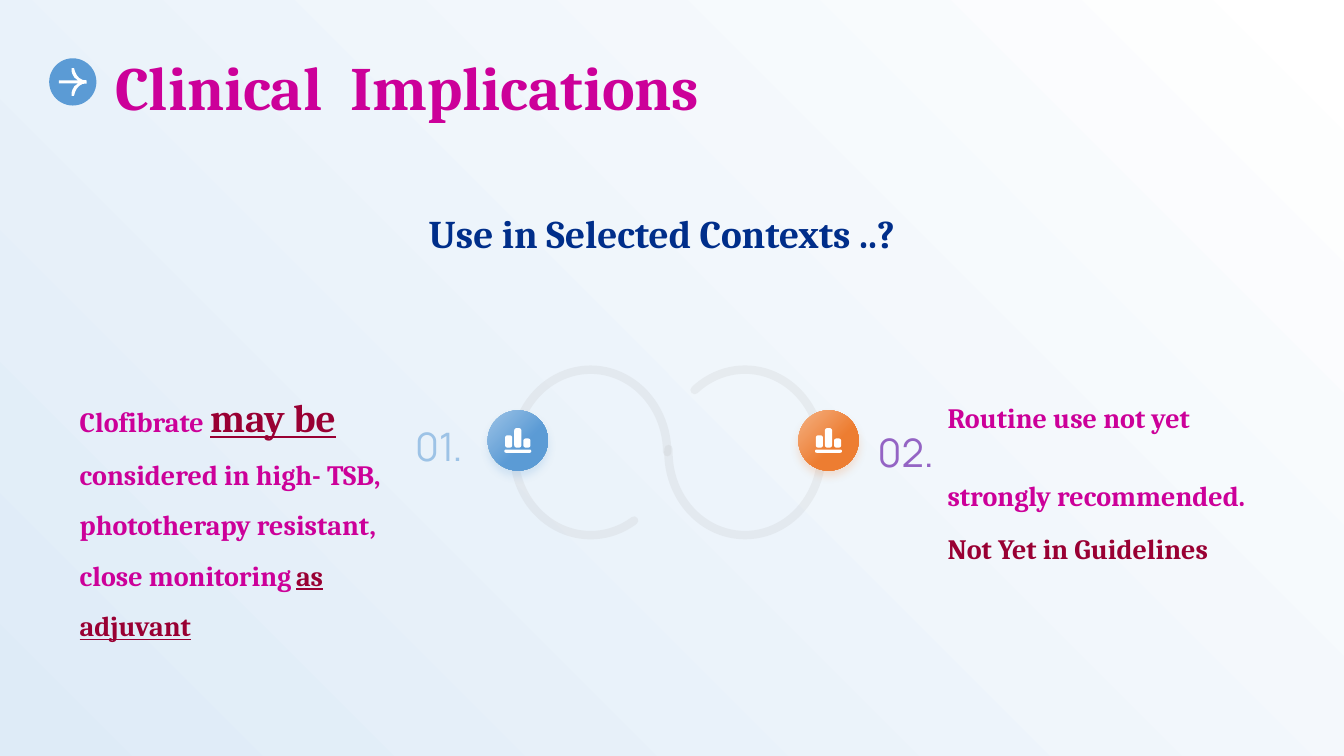
from math import cos, radians, sin

from lxml.etree import SubElement
from pptx import Presentation
from pptx.dml.color import RGBColor
from pptx.enum.shapes import MSO_SHAPE as Shape
from pptx.enum.text import MSO_ANCHOR as Anchor, MSO_AUTO_SIZE as AutoSize, PP_ALIGN as Align
from pptx.oxml.ns import qn
from pptx.util import Cm, Pt

COLORS = {
    "white": "FFFFFF", "mist": "DEEBF7", "grey": "BFBFBF", "ink": "262626",
    "blue": "5B9BD5", "light blue": "9DC3E6", "orange": "ED7D31", "light orange": "F4B183",
    "purple": "9464C4", "navy": "002E8A", "magenta": "CC0099", "crimson": "990033",
}
SLIDE_SIZE = (33.87, 19.05)
BLUE_FADE = ("light blue", "blue")
ORANGE_FADE = ("light orange", "orange")

TITLE = [
    ("Clinical", {"size": 44, "color": "magenta"}),
    (" ", {"size": 44, "color": "magenta", "spacing": 10}),
    ("Implications", {"size": 44, "color": "magenta"}),
]
HEADING = [("Use in Selected Contexts ..?", {"size": 28, "color": "navy"})]
SELECTED_USE = [
    ("Clofibrate ", {"size": 20, "color": "magenta"}),
    ("may be ", {"size": 28, "color": "crimson", "underline": True}),
    ("considered in high- TSB, phototherapy resistant, close monitoring",
     {"size": 20, "color": "magenta"}),
    (" ", {"size": 14, "color": "ink", "bold": False}),
    ("as adjuvant", {"size": 20, "color": "crimson", "underline": True}),
]
ROUTINE_USE = [
    ("Routine use not yet strongly recommended.", {"size": 20, "color": "magenta"}),
    (" ", {"size": 32, "color": "crimson"}),
    ("Not Yet in Guidelines", {"size": 20, "color": "crimson"}),
]
NUMBER_STYLE = {"size": 28, "font": "Manrope", "bold": False}
TEXTS = [
    ((2.9, 1.47, 29.08, 1.19), TITLE, {"spacing": 1.1, "anchor": Anchor.MIDDLE}),
    ((3, 4.06, 27.36, 2.39), HEADING, {"align": Align.CENTER, "anchor": Anchor.BOTTOM}),
    ((2.01, 9.32, 7.75, 3.07), SELECTED_USE, {}),
    ((23.88, 9.68, 7.75, 5.79), ROUTINE_USE, {}),
    ((10.11, 10.39, 1.8, 1.35), [("01.", {**NUMBER_STYLE, "color": BLUE_FADE})],
     {"spacing": 1.1, "align": Align.RIGHT, "label": True}),
    ((21.87, 10.54, 1.96, 1.35), [("02.", {**NUMBER_STYLE, "color": "purple"})],
     {"spacing": 1.1, "label": True}),
]

ARC_TOP, ARC_SIZE = 9.47, (4.17, 3.86)
ARCS = [(12.8, (147.42, 89.81), False), (16.69, (87.51, 38.99), True)]
BADGE_TOP, BADGE_SIZE = 10.34, 1.52
BADGES = [(12.29, BLUE_FADE), (20.12, ORANGE_FADE)]
CHART_BARS = [(-0.34, 0.23, 0.68, 0.08), (-0.32, -0.13, 0.18, 0.31),
              (-0.09, -0.31, 0.18, 0.49), (0.14, -0.05, 0.18, 0.23)]
ARROW_BOX = (1.24, 1.47, 1.19, 1.19)
ARROW_UPPER = [(-0.35, -0.04), (0.13, -0.04), (0.04, -0.11), (-0.01, -0.2), (-0.03, -0.27),
               (-0.03, -0.35), (0.03, -0.35), (0.06, -0.25), (0.1, -0.17), (0.16, -0.1),
               (0.25, -0.05), (0.35, -0.04)]


def rgb(name):
    return RGBColor.from_string(COLORS[name])


def set_fill(fill, color, angle=315, end=0.6):
    if isinstance(color, str):
        fill.solid()
        fill.fore_color.rgb = rgb(color)
        return
    fill.gradient()
    fill.gradient_angle = angle
    for stop, name, position in zip(fill.gradient_stops, color, (0, end)):
        stop.color.rgb = rgb(name)
        stop.position = position


def add_filled(slide, kind, box, color, **gradient):
    shape = slide.shapes.add_shape(kind, *map(Cm, box))
    shape.shadow.inherit = False
    shape.line.fill.background()
    set_fill(shape.fill, color, **gradient)
    return shape


def add_arc(slide, left, angles, flipped):
    arc = slide.shapes.add_shape(Shape.ARC, Cm(left), Cm(ARC_TOP), *map(Cm, ARC_SIZE))
    arc.shadow.inherit = False
    arc.rotation = 270
    for index, angle in enumerate(angles):
        arc.adjustments[index] = angle * 0.6
    if flipped:
        arc._element.spPr.find(qn("a:xfrm")).set("flipV", "1")
    arc.fill.background()
    arc.line.width = Pt(6)
    arc.line.color.rgb = rgb("grey")
    line = arc._element.spPr.find(qn("a:ln"))
    line.set("cap", "rnd")
    SubElement(line.find(".//" + qn("a:srgbClr")), qn("a:alpha"), val="20000")


def add_glow(shape, color):
    effects = shape._element.spPr.find(qn("a:effectLst"))
    shadow = SubElement(effects, qn("a:outerShdw"), blurRad=str(Pt(6)), dist=str(Pt(4)),
                        dir="5400000", algn="t", rotWithShape="0")
    tint = SubElement(shadow, qn("a:srgbClr"), val=COLORS[color])
    SubElement(tint, qn("a:alpha"), val="20000")


def rounded_outline(left, top, width, height):
    radius = min(0.06, height / 2)
    corners = [(left + width - radius, top + height - radius), (left + radius, top + height - radius),
               (left + radius, top + radius), (left + width - radius, top + radius)]
    return [(x + radius * cos(radians(90 * turn + step)), y + radius * sin(radians(90 * turn + step)))
            for turn, (x, y) in enumerate(corners) for step in range(0, 91, 15)]


def add_icon(slide, center, outlines):
    contours = [[(Cm(center[0] + x), Cm(center[1] + y)) for x, y in outline] for outline in outlines]
    builder = slide.shapes.build_freeform(*contours[0][0])
    for index, contour in enumerate(contours):
        if index:
            builder.move_to(*contour[0])
        builder.add_line_segments(contour[1:], close=True)
    icon = builder.convert_to_shape()
    icon.shadow.inherit = False
    icon.line.fill.background()
    set_fill(icon.fill, "white")


def add_text(slide, box, runs, spacing=1.5, align=Align.LEFT, anchor=Anchor.TOP, label=False):
    text_frame = slide.shapes.add_textbox(*map(Cm, box)).text_frame
    text_frame.word_wrap = not label
    text_frame.vertical_anchor = anchor
    if label:
        text_frame.auto_size = AutoSize.SHAPE_TO_FIT_TEXT
    else:
        text_frame.margin_left = text_frame.margin_right = 0
        text_frame.margin_top = text_frame.margin_bottom = 0
    paragraph = text_frame.paragraphs[0]
    paragraph.alignment = align
    paragraph.line_spacing = spacing
    for words, style in runs:
        run = paragraph.add_run()
        run.text = words
        run.font.name = style.get("font", "Cambria")
        run.font.size = Pt(style["size"])
        run.font.bold = style.get("bold", True)
        run.font.underline = style.get("underline", False)
        set_fill(run.font.fill, style["color"])
        if "spacing" in style:
            run.font._element.set("spc", str(style["spacing"] * 100))


def main():
    """Build the clinical implications slide."""
    presentation = Presentation()
    presentation.slide_width, presentation.slide_height = map(Cm, SLIDE_SIZE)
    slide = presentation.slides.add_slide(presentation.slide_layouts[6])
    add_filled(slide, Shape.RECTANGLE, (0, 0, *SLIDE_SIZE), ("white", "mist"), angle=225, end=1)
    for arc in ARCS:
        add_arc(slide, *arc)
    for box, runs, options in TEXTS:
        add_text(slide, box, runs, **options)
    bars = [rounded_outline(*bar) for bar in CHART_BARS]
    for left, fade in BADGES:
        badge = add_filled(slide, Shape.OVAL, (left, BADGE_TOP, BADGE_SIZE, BADGE_SIZE), fade)
        add_glow(badge, fade[1])
        add_icon(slide, (left + BADGE_SIZE / 2, BADGE_TOP + BADGE_SIZE / 2), bars)
    add_filled(slide, Shape.OVAL, ARROW_BOX, "blue")
    left, top, width, height = ARROW_BOX
    arrow = ARROW_UPPER + [(x, -y) for x, y in reversed(ARROW_UPPER)]
    add_icon(slide, (left + width / 2, top + height / 2), [arrow])
    presentation.save("out.pptx")


if __name__ == "__main__":
    main()
